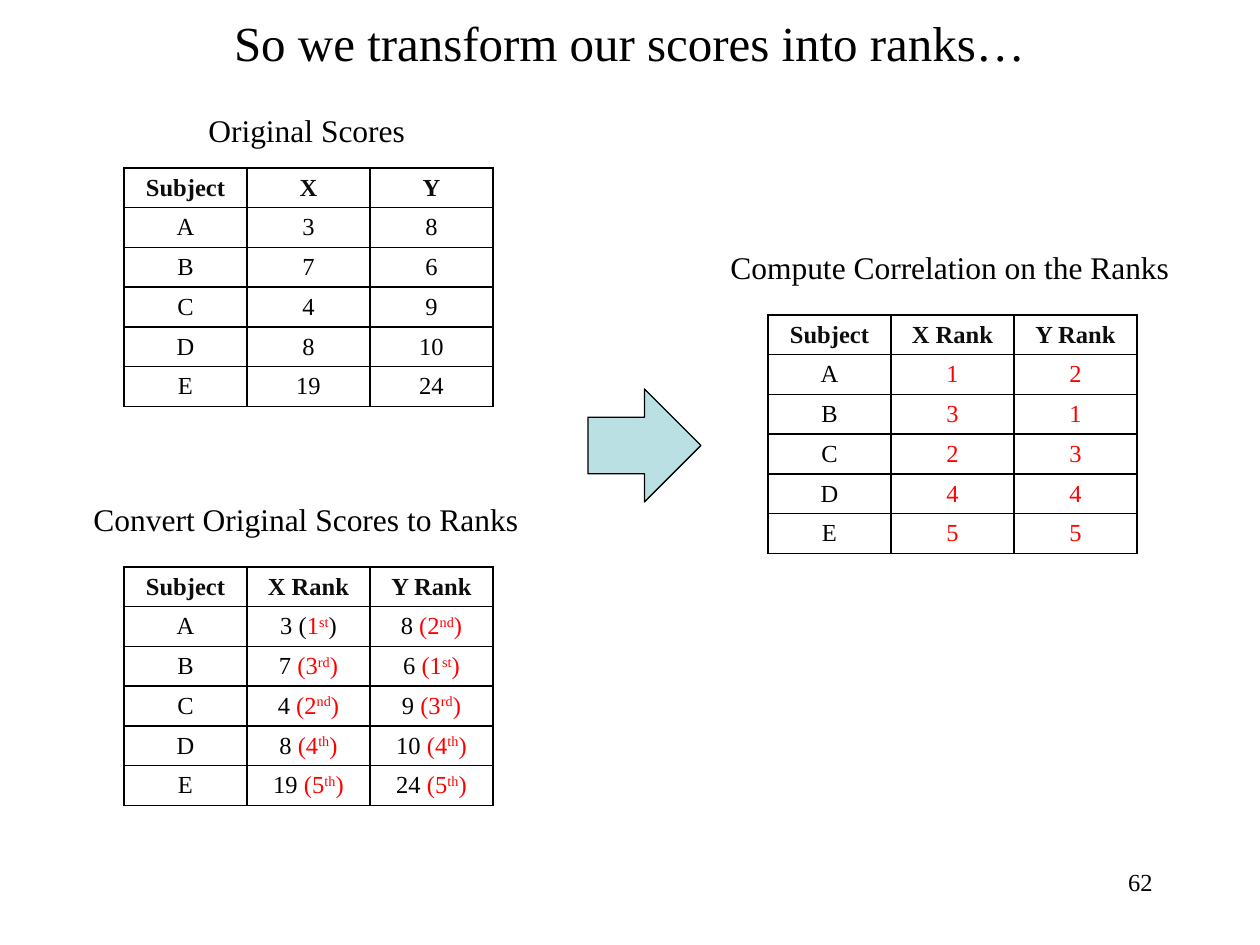
from lxml import etree
from pptx import Presentation
from pptx.dml.color import RGBColor
from pptx.enum.shapes import MSO_SHAPE
from pptx.enum.text import MSO_ANCHOR, PP_ALIGN
from pptx.oxml.ns import qn
from pptx.util import Pt

LEFT, CENTER, RIGHT = PP_ALIGN.LEFT, PP_ALIGN.CENTER, PP_ALIGN.RIGHT
TOP, MIDDLE = MSO_ANCHOR.TOP, MSO_ANCHOR.MIDDLE
RIGHT_ARROW = MSO_SHAPE.RIGHT_ARROW
EMU_PER_PX = 914400 / 126
BLACK, HEADER, RED, AQUA = "000000", "0D0D0D", "FF0000", "BBE0E3"
FONT = "Times New Roman"
COLUMN_WIDTH, ROW_HEIGHT = 123, 33
SUFFIXES = {1: "st", 2: "nd", 3: "rd"}


def px(length):
    return round(length * EMU_PER_PX)


def rgb(value):
    return RGBColor.from_string(value)


class Deck:
    """Holds the text style and the current slide, and draws each kind of element."""

    def __init__(self, width, height):
        self.presentation = Presentation()
        self.presentation.slide_width = px(width)
        self.presentation.slide_height = px(height)
        self.slide = self.presentation.slides.add_slide(self.presentation.slide_layouts[6])

    def style(self, run, size, color=BLACK, bold=False):
        run.font.name = FONT
        run.font.size = Pt(size)
        run.font.bold = bold
        run.font.color.rgb = rgb(color)

    def text(self, words, left, top, width, height, size, align=LEFT, anchor=TOP, wrap=True):
        frame = self.slide.shapes.add_textbox(px(left), px(top), px(width), px(height)).text_frame
        frame.word_wrap = wrap
        frame.vertical_anchor = anchor
        frame.text = words
        frame.paragraphs[0].alignment = align
        self.style(frame.paragraphs[0].runs[0], size)

    def arrow(self, left, top, side):
        arrow = self.slide.shapes.add_shape(RIGHT_ARROW, px(left), px(top), px(side), px(side))
        arrow.shadow.inherit = False
        arrow.fill.solid()
        arrow.fill.fore_color.rgb = rgb(AQUA)
        arrow.line.color.rgb = rgb(BLACK)
        arrow.line.width = Pt(0.75)

    def border(self, cell):
        properties = cell._tc.get_or_add_tcPr()
        for position, side in enumerate(("lnL", "lnR", "lnT", "lnB")):
            line = etree.Element(qn(f"a:{side}"), w=str(Pt(1)))
            fill = etree.SubElement(line, qn("a:solidFill"))
            etree.SubElement(fill, qn("a:srgbClr"), val=BLACK)
            properties.insert(position, line)

    def cell(self, cell, parts, bold):
        cell.fill.background()
        self.border(cell)
        paragraph = cell.text_frame.paragraphs[0]
        paragraph.alignment = CENTER
        for words, color, raised in parts:
            run = paragraph.add_run()
            run.text = words
            self.style(run, 14, color, bold)
            if raised:
                run._r.get_or_add_rPr().set("baseline", "30000")

    def table(self, headings, rows, left, top):
        grid = [[plain(heading, HEADER) for heading in headings]] + rows
        columns = len(headings)
        table = self.slide.shapes.add_table(
            len(grid), columns, px(left), px(top),
            px(COLUMN_WIDTH * columns), px(ROW_HEIGHT * len(grid))).table
        table.first_row = table.horz_banding = False
        for column in table.columns:
            column.width = px(COLUMN_WIDTH)
        for row_index, row in enumerate(grid):
            for column_index, parts in enumerate(row):
                self.cell(table.cell(row_index, column_index), parts, row_index == 0)


def plain(value, color=BLACK):
    return [(str(value), color, False)]


def ranked(score, rank, brackets=RED):
    suffix = SUFFIXES.get(rank, "th")
    return [(f"{score} ", BLACK, False), ("(", brackets, False), (str(rank), RED, False),
            (suffix, RED, True), (")", brackets, False)]


def main():
    subjects = "ABCDE"
    x_scores = [3, 7, 4, 8, 19]
    y_scores = [8, 6, 9, 10, 24]
    x_ranks, y_ranks = ([sorted(scores).index(score) + 1 for score in scores]
                        for scores in (x_scores, y_scores))
    records = list(zip(subjects, x_scores, y_scores, x_ranks, y_ranks))

    score_rows = [[plain(s), plain(x), plain(y)] for s, x, y, _, _ in records]
    conversion_rows = [[plain(s), ranked(x, x_rank), ranked(y, y_rank)]
                       for s, x, y, x_rank, y_rank in records]
    conversion_rows[0][1] = ranked(x_scores[0], x_ranks[0], BLACK)
    rank_rows = [[plain(s), plain(x_rank, RED), plain(y_rank, RED)]
                 for s, _, _, x_rank, y_rank in records]
    rank_headings = ["Subject", "X Rank", "Y Rank"]

    deck = Deck(1260, 945)
    deck.table(["Subject", "X", "Y"], score_rows, 124, 168)
    deck.table(rank_headings, conversion_rows, 124, 567)
    deck.table(rank_headings, rank_rows, 768, 315)
    deck.text("Original Scores", 196, 105, 224, 51, 18, wrap=False)
    deck.text("Convert Original Scores to Ranks", 81, 494, 455, 51, 18, wrap=False)
    deck.text("Compute Correlation on the Ranks", 718, 242, 469, 51, 18, wrap=False)
    deck.arrow(588, 389, 113)
    deck.text("So we transform our scores into ranks…", 94, 0, 1071, 84, 28, CENTER, MIDDLE)
    deck.text("62", 903, 861, 262, 63, 14, RIGHT)
    deck.presentation.save("out.pptx")


if __name__ == "__main__":
    main()
